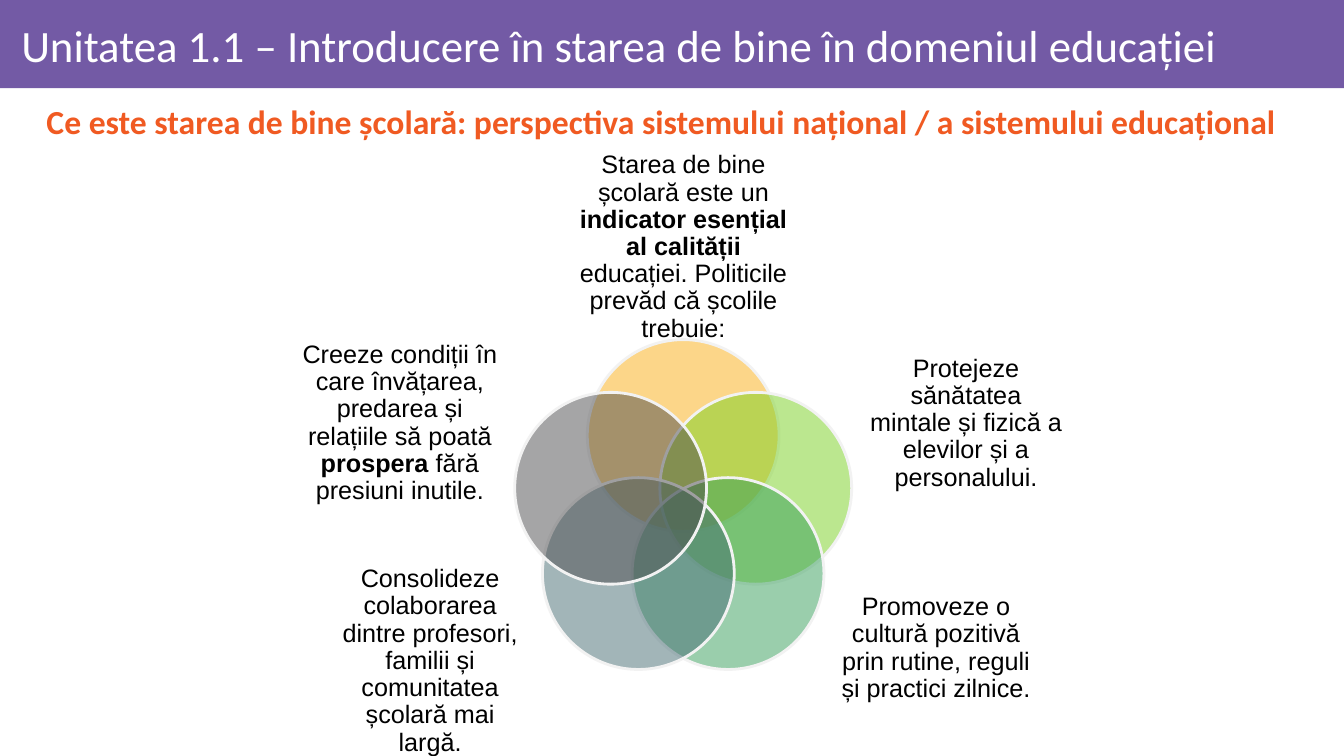
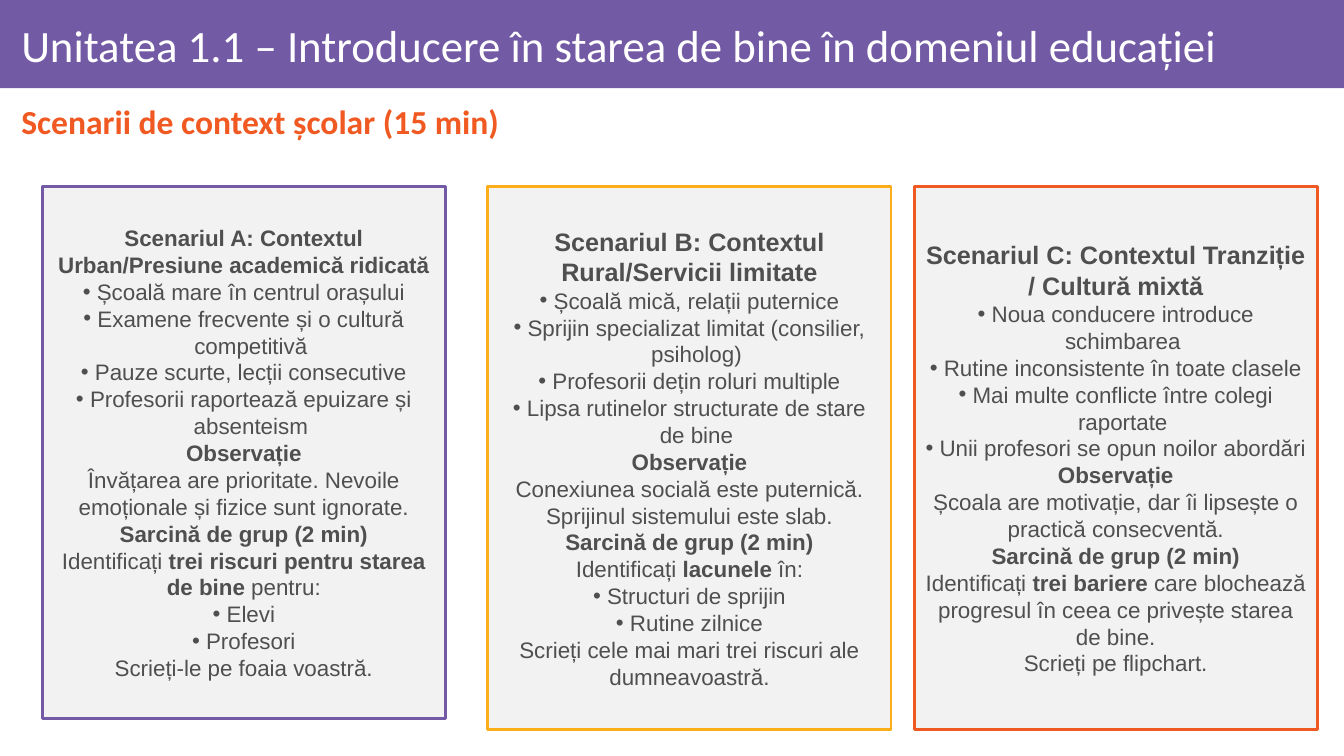
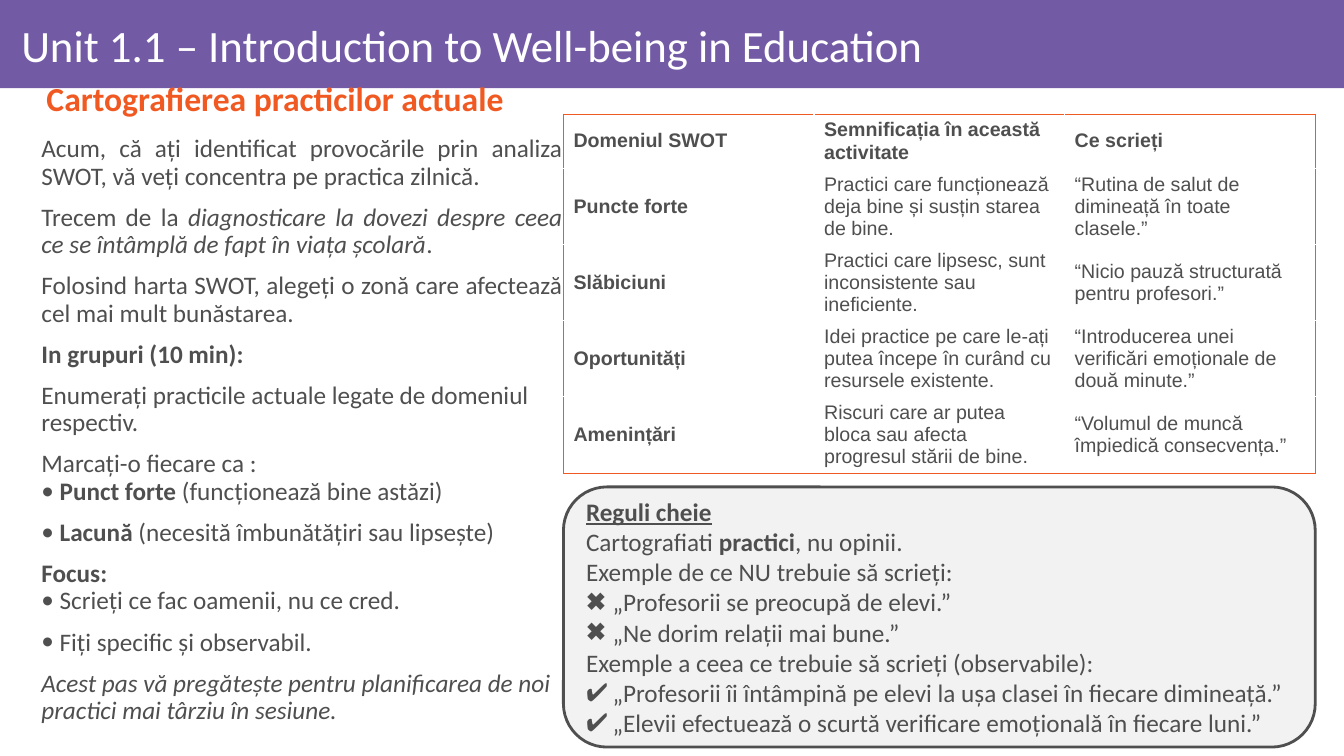
"""Build three slides on school well-being: a Venn ring, three scenarios and a SWOT mapping task."""
import math

from lxml import etree
from pptx import Presentation
from pptx import util as u
from pptx.dml.color import RGBColor
from pptx.enum import shapes, text
from pptx.oxml.ns import qn

COLORS = {
    "purple": "735AA5", "orange": "F05A22", "amber": "FBAE17", "ink": "4F4F50",
    "panel": "F2F2F2", "white": "FFFFFF", "black": "000000",
}
LEFT, CENTER, JUSTIFY = text.PP_ALIGN.LEFT, text.PP_ALIGN.CENTER, text.PP_ALIGN.JUSTIFY
MIDDLE, TOP = text.MSO_ANCHOR.MIDDLE, text.MSO_ANCHOR.TOP


def write(frame, lines, anchor=MIDDLE, insets=(7.2, 3.6, 7.2, 3.6), **common):
    """Fill a text frame; *bold*, _italic_ and a leading marker become formatting."""
    frame.word_wrap = True
    frame.auto_size = text.MSO_AUTO_SIZE.NONE
    frame.vertical_anchor = anchor
    frame.margin_left, frame.margin_top, frame.margin_right, frame.margin_bottom = map(u.Pt, insets)
    for number, line in enumerate(lines):
        words, own = line if isinstance(line, tuple) else (line, {})
        look = {"font": "Calibri", "size": 18, "color": "ink", "align": LEFT, "spacing": 1,
                "before": 0, "margin": 0, "first": 0, "gap": 13, "underline": None, **common, **own}
        paragraph = frame.paragraphs[0] if number == 0 else frame.add_paragraph()
        paragraph.alignment = look["align"]
        paragraph.line_spacing = look["spacing"]
        paragraph.space_before = u.Pt(look["before"])
        margin, first = look["margin"], look["first"]
        properties = paragraph._p.get_or_add_pPr()
        if words[0] in "•✖✔":
            marker, words = words.split(" ", 1)
            margin, first = margin + look["gap"], -look["gap"]
            etree.SubElement(properties, qn("a:buFont"), typeface=look["font"])
            etree.SubElement(properties, qn("a:buChar"), char=marker)
        else:
            etree.SubElement(properties, qn("a:buNone"))
        properties.set("marL", str(u.Pt(margin)))
        properties.set("indent", str(u.Pt(first)))
        for strong, chunk in enumerate(words.split("*")):
            for slanted, piece in enumerate(chunk.split("_")):
                if piece:
                    run = paragraph.add_run()
                    run.text = piece
                    run.font.name = look["font"]
                    run.font.size = u.Pt(look["size"])
                    run.font.bold = strong % 2 == 1
                    run.font.italic = slanted % 2 == 1
                    run.font.underline = look["underline"]
                    run.font.color.rgb = RGBColor.from_string(COLORS[look["color"]])


def add_panel(slide, kind, box, fill, line=None):
    """Add a flat preset shape, with a 2 pt outline when a line colour is given."""
    panel = slide.shapes.add_shape(kind, *map(u.Pt, box))
    panel.shadow.inherit = False
    panel.fill.solid()
    panel.fill.fore_color.rgb = RGBColor.from_string(fill)
    if line:
        panel.line.color.rgb = RGBColor.from_string(line)
        panel.line.width = u.Pt(2)
    else:
        panel.line.fill.background()
    return panel


deck = Presentation()
deck.slide_width, deck.slide_height = u.Pt(960), u.Pt(540)

unit_title = "Unitatea 1.1 – Introducere în starea de bine în domeniul educației"
heads = [
    (1, unit_title, 67, {"margin": 36, "first": -18},
     "Ce este starea de bine școlară: perspectiva sistemului național / a sistemului educațional"),
    (1, unit_title, 67, {}, "Scenarii de context școlar (15 min)"),
    (3, "Unit 1.1 – Introduction to Well-being in Education", 50.4, {"margin": 36, "first": -18},
     "Cartografierea practicilor actuale"),
]
for layout, title, subtitle_top, indents, subtitle in heads:
    slide = deck.slides.add_slide(deck.slide_layouts[layout])
    heading, topic = slide.placeholders[0], slide.placeholders[1]
    heading.left, heading.top, heading.width, heading.height = map(u.Pt, (8, 6.5, 940, 56))
    topic.left, topic.top, topic.width, topic.height = map(u.Pt, (8, subtitle_top, 940, 43.2))
    write(heading.text_frame, [title], insets=(7.2, 4.3, 4.3, 4.3), size=32, color="white", spacing=0.9)
    write(topic.text_frame, [f"*{subtitle}*"], size=24, color="orange", align=JUSTIFY,
          spacing=0.9, **indents)
perspective, scenarios, mapping = deck.slides

band = add_panel(perspective, shapes.MSO_SHAPE.RECTANGLE, (0, 0, 960, 63), COLORS["purple"])
band.element.nvSpPr.cNvPr.set("id", "20")
deck.slide_master.shapes.element.insert(2, band.element)

ring_x, ring_y, ring_radius, diameter = 488, 365.6, 54.5, 137
duties = [
    ("FAAE15", (409, 131, 158.4, 91.4),
     "Starea de bine școlară este un *indicator esențial al calității* educației. "
     "Politicile prevăd că școlile trebuie:"),
    ("79D121", (619, 252.7, 142, 99.4),
     "Protejeze sănătatea mintale și fizică a elevilor și a personalului."),
    ("369F5A", (597.6, 413.3, 142, 99.4),
     "Promoveze o cultură pozitivă prin rutine, reguli și practici zilnice."),
    ("466C73", (236.2, 422.6, 142, 99.4),
     "Consolideze colaborarea dintre profesori, familii și comunitatea școlară mai largă."),
    ("4D4D4F", (214.6, 252.7, 142, 99.4),
     "Creeze condiții în care învățarea, predarea și relațiile să poată *prospera* "
     "fără presiuni inutile."),
]
for step, (tint, label_box, duty) in enumerate(duties):
    angle = 2 * math.pi * step / len(duties)
    left = ring_x + ring_radius * math.sin(angle) - diameter / 2
    top = ring_y - ring_radius * math.cos(angle) - diameter / 2
    circle = add_panel(perspective, shapes.MSO_SHAPE.OVAL, (left, top, diameter, diameter),
                       tint, COLORS["panel"])
    fill_color = circle.element.spPr.find(qn("a:solidFill")).find(qn("a:srgbClr"))
    etree.SubElement(fill_color, qn("a:alpha"), val="50000")
    label = perspective.shapes.add_textbox(*map(u.Pt, label_box))
    write(label.text_frame, [duty], insets=(0, 0, 0, 0), font="Arial", color="black",
          align=CENTER, spacing=0.9)

contexts = [
    (30.2, 380.2, "purple", [
        "*Scenariul A: Contextul Urban/Presiune academică ridicată*",
        "• Școală mare în centrul orașului",
        "• Examene frecvente și o cultură competitivă",
        "• Pauze scurte, lecții consecutive",
        "• Profesorii raportează epuizare și absenteism",
        "*Observație*",
        "Învățarea are prioritate. Nevoile emoționale și fizice sunt ignorate.",
        "*Sarcină de grup (2 min)*",
        "Identificați *trei riscuri pentru starea de bine* pentru:",
        "• Elevi",
        "• Profesori",
        "Scrieți-le pe foaia voastră.",
    ]),
    (348.5, 388, "amber", [
        ("*Scenariul B: Contextul Rural/Servicii limitate*", {"size": 18}),
        "• Școală mică, relații puternice",
        "• Sprijin specializat limitat (consilier, psiholog)",
        "• Profesorii dețin roluri multiple",
        "• Lipsa rutinelor structurate de stare de bine",
        "*Observație*",
        "Conexiunea socială este puternică. Sprijinul sistemului este slab.",
        "*Sarcină de grup (2 min)*",
        "Identificați *lacunele* în:",
        "• Structuri de sprijin",
        "• Rutine zilnice",
        "Scrieți cele mai mari trei riscuri ale dumneavoastră.",
    ]),
    (653, 388, "orange", [
        ("*Scenariul C: Contextul Tranziție / Cultură mixtă*", {"size": 18}),
        "• Noua conducere introduce schimbarea",
        "• Rutine inconsistente în toate clasele",
        "• Mai multe conflicte între colegi raportate",
        "• Unii profesori se opun noilor abordări",
        "*Observație*",
        "Școala are motivație, dar îi lipsește o practică consecventă.",
        "*Sarcină de grup (2 min)*",
        "Identificați *trei bariere* care blochează progresul în ceea ce privește starea de bine.",
        "Scrieți pe flipchart.",
    ]),
]
for left, height, outline, lines in contexts:
    card = add_panel(scenarios, shapes.MSO_SHAPE.RECTANGLE, (left, 133.2, 288, height),
                     COLORS["panel"], COLORS[outline])
    write(card.text_frame, lines, font="Arial", size=16, align=CENTER, gap=10)

instructions = mapping.placeholders[2]
instructions.left, instructions.top, instructions.width, instructions.height = map(
    u.Pt, (8, 93.6, 401, 440))
justified, attached = {"align": JUSTIFY}, {"before": 0}
write(instructions.text_frame, [
    ("Acum, că ați identificat provocările prin analiza SWOT, vă veți concentra pe practica zilnică.",
     justified),
    ("Trecem de la _diagnosticare la dovezi despre ceea ce se întâmplă de fapt în viața școlară_.",
     justified),
    ("Folosind harta SWOT, alegeți o zonă care afectează cel mai mult bunăstarea.", justified),
    "*In grupuri (10 min):*",
    "Enumerați practicile actuale legate de domeniul respectiv.",
    "Marcați-o fiecare ca :",
    ("• *Punct forte* (funcționează bine astăzi)", attached),
    "• *Lacună* (necesită îmbunătățiri sau lipsește)",
    "*Focus:*",
    ("• Scrieți ce fac oamenii, nu ce cred.", attached),
    "• Fiți specific și observabil.",
    "_Acest pas vă pregătește pentru planificarea de noi practici mai târziu în sesiune._",
], anchor=TOP, spacing=0.9, before=10, margin=14.4)

rules = add_panel(mapping, shapes.MSO_SHAPE.ROUNDED_RECTANGLE, (402.5, 347.8, 537, 185.8),
                  COLORS["panel"], COLORS["ink"])
write(rules.text_frame, [
    ("*Reguli cheie*", {"underline": True}),
    "Cartografiati *practici*, nu opinii.",
    "Exemple de ce NU trebuie să scrieți:",
    "✖ „Profesorii se preocupă de elevi.”",
    "✖ „Ne dorim relații mai bune.”",
    "Exemple a ceea ce trebuie să scrieți (observabile):",
    "✔ „Profesorii îi întâmpină pe elevi la ușa clasei în fiecare dimineață.”",
    "✔ „Elevii efectuează o scurtă verificare emoțională în fiecare luni.”",
], gap=19)

swot_rows = [
    ("*Domeniul SWOT*", "*Semnificația în această activitate*", "*Ce scrieți*"),
    ("*Puncte forte*", "Practici care funcționează deja bine și susțin starea de bine.",
     "“Rutina de salut de dimineață în toate clasele.”"),
    ("*Slăbiciuni*", "Practici care lipsesc, sunt inconsistente sau ineficiente.",
     "“Nicio pauză structurată pentru profesori.”"),
    ("*Oportunități*", "Idei practice pe care le-ați putea începe în curând cu resursele existente.",
     "“Introducerea unei verificări emoționale de două minute.”"),
    ("*Amenințări*", "Riscuri care ar putea bloca sau afecta progresul stării de bine.",
     "“Volumul de muncă împiedică consecvența.”"),
]
last_row, last_column = len(swot_rows) - 1, len(swot_rows[0]) - 1
swot = mapping.shapes.add_table(last_row + 1, last_column + 1,
                                *map(u.Pt, (402.5, 81.5, 537, 242))).table
swot.first_row = swot.horz_banding = False
for row, entries in enumerate(swot_rows):
    swot.rows[row].height = u.Pt(53.3 if row else 28.8)
    for column, entry in enumerate(entries):
        cell = swot.cell(row, column)
        cell.fill.background()
        cell.vertical_anchor = MIDDLE
        write(cell.text_frame, [entry], font="Arial", size=14)
        sides = [("a:lnL", column == 0), ("a:lnR", column == last_column),
                 ("a:lnT", row == 0), ("a:lnB", row == last_row)]
        edges = [side for side, outer in sides if outer]
        for position, side in enumerate(edges):
            edge = etree.Element(qn(side), w=str(u.Pt(0.75)))
            paint = etree.SubElement(edge, qn("a:solidFill"))
            etree.SubElement(paint, qn("a:srgbClr"), val=COLORS["orange"])
            cell._tc.get_or_add_tcPr().insert(position, edge)

deck.save("out.pptx")
